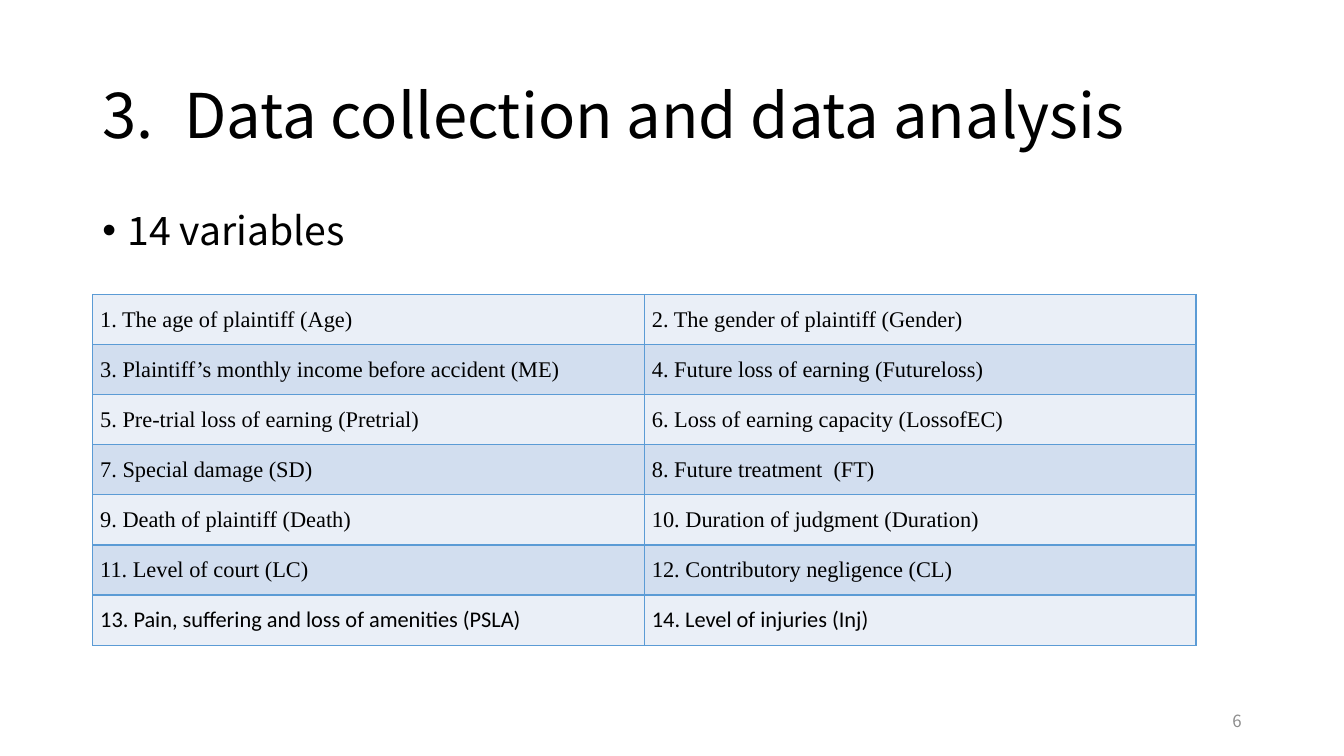
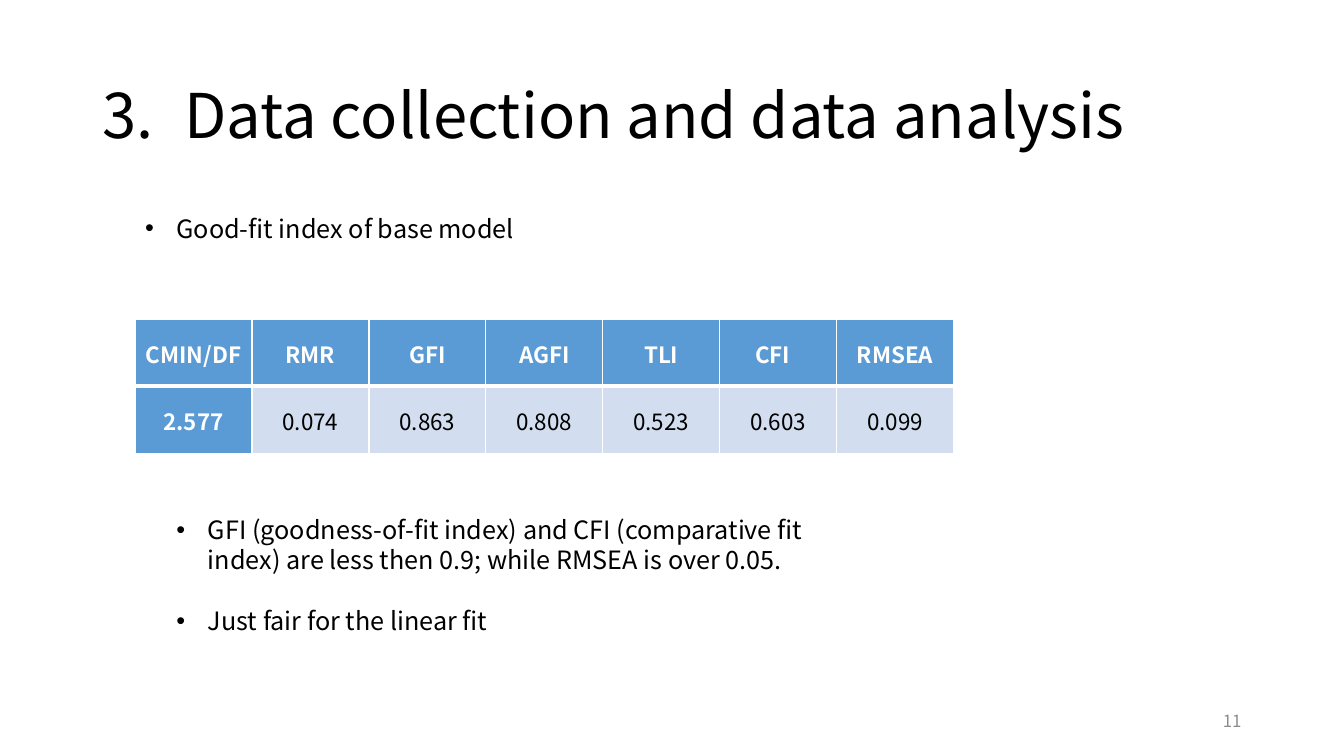
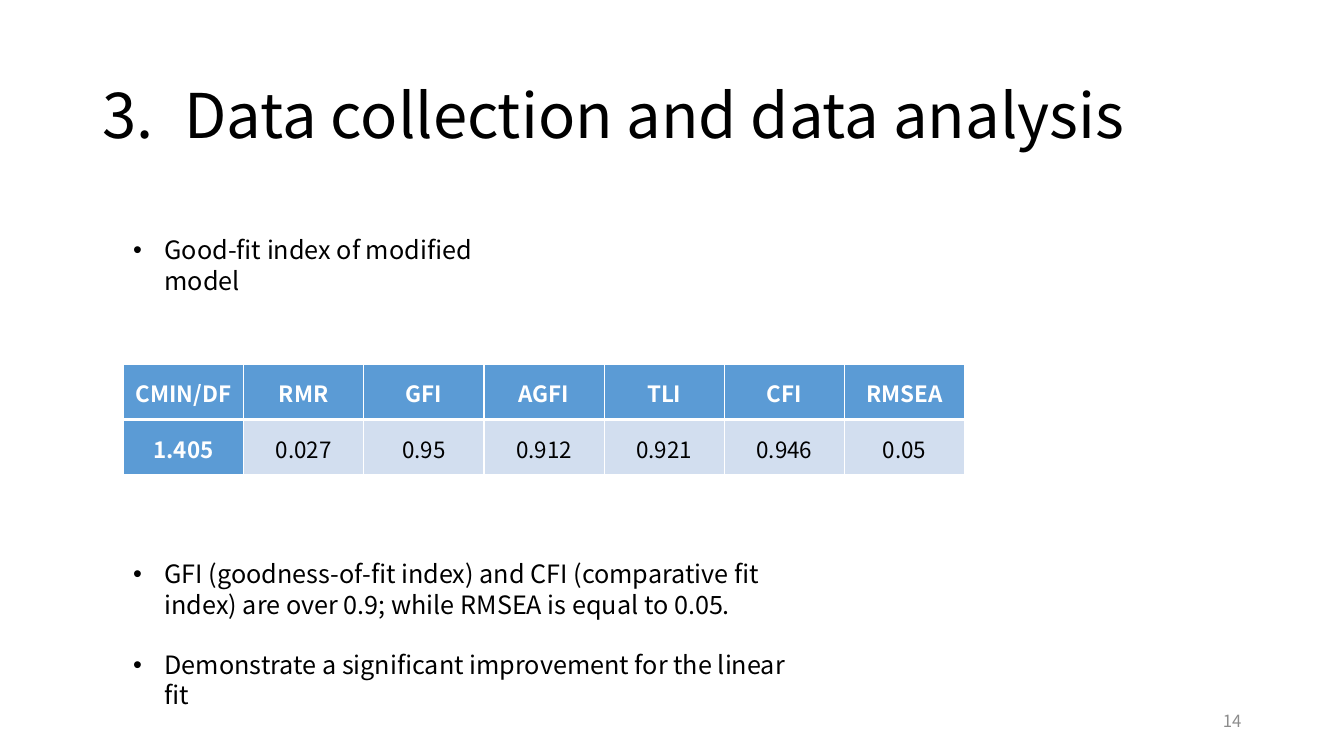
import dataclasses

import pptx
import pptx.dml.color
import pptx.enum.text
import pptx.oxml
import pptx.oxml.ns
import pptx.util

Pt = pptx.util.Pt
ALIGN = pptx.enum.text.PP_ALIGN
ANCHOR = pptx.enum.text.MSO_ANCHOR
AUTO = pptx.enum.text.MSO_AUTO_SIZE


@dataclasses.dataclass(frozen=True)
class Theme:
    """Hold the colours, fonts and type sizes of the deck."""
    sans: str = "Noto Sans CJK SC"
    serif: str = "Times New Roman"
    humanist: str = "Calibri"
    black: str = "000000"
    white: str = "FFFFFF"
    grey: str = "8C8C8C"
    blue: str = "5B9BD5"
    band: str = "D2DEEF"
    pale: str = "EAEFF7"
    title: int = 44
    lead: int = 28
    note: int = 18
    cell: int = 16
    number: int = 12
    leading: float = 1.2


T = Theme()
TITLE = "Data collection and data analysis"
VARIABLES = [
    ("1. The age of plaintiff (Age)", "2. The gender of plaintiff (Gender)"),
    ("3. Plaintiff’s monthly income before accident (ME)", "4. Future loss of earning (Futureloss)"),
    ("5. Pre-trial loss of earning (Pretrial)", "6. Loss of earning capacity (LossofEC)"),
    ("7. Special damage (SD)", "8. Future treatment  (FT)"),
    ("9. Death of plaintiff (Death)", "10. Duration of judgment (Duration)"),
    ("11. Level of court (LC)", "12. Contributory negligence (CL)"),
    ("13. Pain, suffering and loss of amenities (PSLA)", "14. Level of injuries (Inj)"),
]
INDICES = ("CMIN/DF", "RMR", "GFI", "AGFI", "TLI", "CFI", "RMSEA")
BASE_FIT = ("2.577", "0.074", "0.863", "0.808", "0.523", "0.603", "0.099")
MODIFIED_FIT = ("1.405", "0.027", "0.95", "0.912", "0.921", "0.946", "0.05")


def set_all(obj, values):
    """Set every attribute in a dict of format values."""
    for name, value in values.items():
        setattr(obj, name, value)


def rgb(color):
    """Return the colour object for a hex string."""
    return pptx.dml.color.RGBColor.from_string(color)


def write(p, text, size, color=T.black, font=T.sans, bold=False, **para):
    """Put one formatted run into a paragraph."""
    set_all(p, para)
    r = p.add_run()
    r.text = text
    set_all(r.font, {"name": font, "size": Pt(size), "bold": bold})
    r.font.color.rgb = rgb(color)


def indent(p, left, first):
    """Set the left and first-line indents of a paragraph."""
    pPr = p._p.get_or_add_pPr()
    pPr.set("marL", str(Pt(left)))
    pPr.set("indent", str(Pt(first)))
    return pPr


def mark(p, hang, tag, **attrs):
    """Give a paragraph a hanging bullet or number."""
    pPr = indent(p, hang, -hang)
    if tag == "buChar":
        font = pptx.oxml.parse_xml(f'<a:buFont {pptx.oxml.ns.nsdecls("a")} typeface="Arial"/>')
        pPr.append(font)
    bullet = pptx.oxml.parse_xml(f'<a:{tag} {pptx.oxml.ns.nsdecls("a")}/>')
    for name, value in attrs.items():
        bullet.set(name, value)
    pPr.append(bullet)


def add_text(slide, box, anchor=ANCHOR.TOP):
    """Add a wrapping text box and return its text frame."""
    tf = slide.shapes.add_textbox(*map(Pt, box)).text_frame
    set_all(tf, {"word_wrap": True, "auto_size": AUTO.NONE, "vertical_anchor": anchor})
    return tf


def add_bullets(slide, box, items, size=T.note, hang=22.5):
    """Add a bulleted list with one empty line's height between items."""
    tf = add_text(slide, box)
    line = Pt(size * T.leading)
    for i, text in enumerate(items):
        p = tf.add_paragraph() if i else tf.paragraphs[0]
        write(p, text, size, line_spacing=line, space_before=line if i else Pt(0))
        mark(p, hang, "buChar", char="•")


def add_slide(prs, number):
    """Add a slide with the shared title and its page number."""
    slide = prs.slides.add_slide(prs.slide_layouts[5])
    sp = slide.shapes.title
    set_all(sp, {"left": Pt(66), "top": Pt(28.8), "width": Pt(828), "height": Pt(104.4)})
    tf = sp.text_frame
    set_all(tf, {"word_wrap": True, "auto_size": AUTO.NONE, "vertical_anchor": ANCHOR.MIDDLE})
    p = tf.paragraphs[0]
    write(p, TITLE, T.title, alignment=ALIGN.LEFT, line_spacing=Pt(T.title * T.leading))
    mark(p, 58.5, "buAutoNum", type="arabicPeriod", startAt="3")
    tf = add_text(slide, (678, 500.5, 216, 28.8), ANCHOR.MIDDLE)
    write(tf.paragraphs[0], str(number), T.number, T.grey, alignment=ALIGN.RIGHT)
    return slide


def border(cell, color, **widths):
    """Draw the sides of a cell, each with its own width."""
    tcPr = cell._tc.get_or_add_tcPr()
    for side in "LRTB":
        tcPr.append(pptx.oxml.parse_xml(
            f'<a:ln{side} {pptx.oxml.ns.nsdecls("a")} w="{Pt(widths.get(side, 1))}">'
            f'<a:solidFill><a:srgbClr val="{color}"/></a:solidFill></a:ln{side}>'))


def add_grid(slide, box, rows, margin, style):
    """Add an even table whose cells follow style(row, column)."""
    table = slide.shapes.add_table(len(rows), len(rows[0]), *map(Pt, box)).table
    set_all(table, {"first_row": False, "horz_banding": False})
    for col in table.columns:
        col.width = Pt(box[2] / len(rows[0]))
    for i, row in enumerate(rows):
        table.rows[i].height = Pt(box[3] / len(rows))
        for j, text in enumerate(row):
            fill, line, widths, text_format = style(i, j)
            cell = table.cell(i, j)
            set_all(cell, {"margin_left": Pt(margin), "margin_right": Pt(margin), "margin_top": 0,
                           "margin_bottom": 0, "vertical_anchor": ANCHOR.MIDDLE})
            border(cell, line, **widths)
            cell.fill.solid()
            cell.fill.fore_color.rgb = rgb(fill)
            write(cell.text_frame.paragraphs[0], text, T.cell, **text_format)
    return table


def variable_style(i, j):
    """Style the banded list of variables."""
    font = T.humanist if i == len(VARIABLES) - 1 else T.serif
    return T.band if i % 2 else T.pale, T.blue, {}, {"font": font}


def fit_style(i, j):
    """Style the fit indices, with a header row and column."""
    head = i == 0 or j == 0
    text_format = {"color": T.white if head else T.black, "bold": head,
                   "alignment": ALIGN.CENTER, "line_spacing": 1.07}
    return T.blue if head else T.band, T.white, {"T": 3} if i else {"B": 3}, text_format


def add_fit_table(slide, box, values):
    """Add a table of fit indices."""
    return add_grid(slide, box, (INDICES, values), 1.4, fit_style)


def main():
    """Build and save the deck."""
    prs = pptx.Presentation()
    set_all(prs, {"slide_width": Pt(960), "slide_height": Pt(540)})

    slide = add_slide(prs, 6)
    add_bullets(slide, (66, 144, 828, 60), ["14 variables"], T.lead, 18)
    add_grid(slide, (66.2, 210.4, 788.2, 250.6), VARIABLES, 5.4, variable_style)

    slide = add_slide(prs, 11)
    table = add_fit_table(slide, (96.5, 227.8, 584.6, 96.2), BASE_FIT)
    p = table.cell(0, INDICES.index("CFI")).text_frame.paragraphs[0]
    p.alignment = ALIGN.LEFT
    indent(p, 0, 24)
    add_bullets(slide, (96.5, 148.5, 301, 29), ["Good-fit index of base model"])
    add_bullets(slide, (119, 364, 476, 94.5), [
        "GFI (goodness-of-fit index) and CFI (comparative fit index) are less then 0.9; "
        "while RMSEA is over 0.05.",
        "Just fair for the linear fit"])

    slide = add_slide(prs, 14)
    add_fit_table(slide, (88.2, 260, 601, 79.2), MODIFIED_FIT)
    add_bullets(slide, (88, 395.5, 480, 94.5), [
        "GFI (goodness-of-fit index) and CFI (comparative fit index) are over 0.9; "
        "while RMSEA is equal to 0.05.",
        "Demonstrate a significant improvement for the linear fit"])
    add_bullets(slide, (88, 164, 301.5, 29), ["Good-fit index of modified model"])

    prs.save("out.pptx")


if __name__ == "__main__":
    main()
